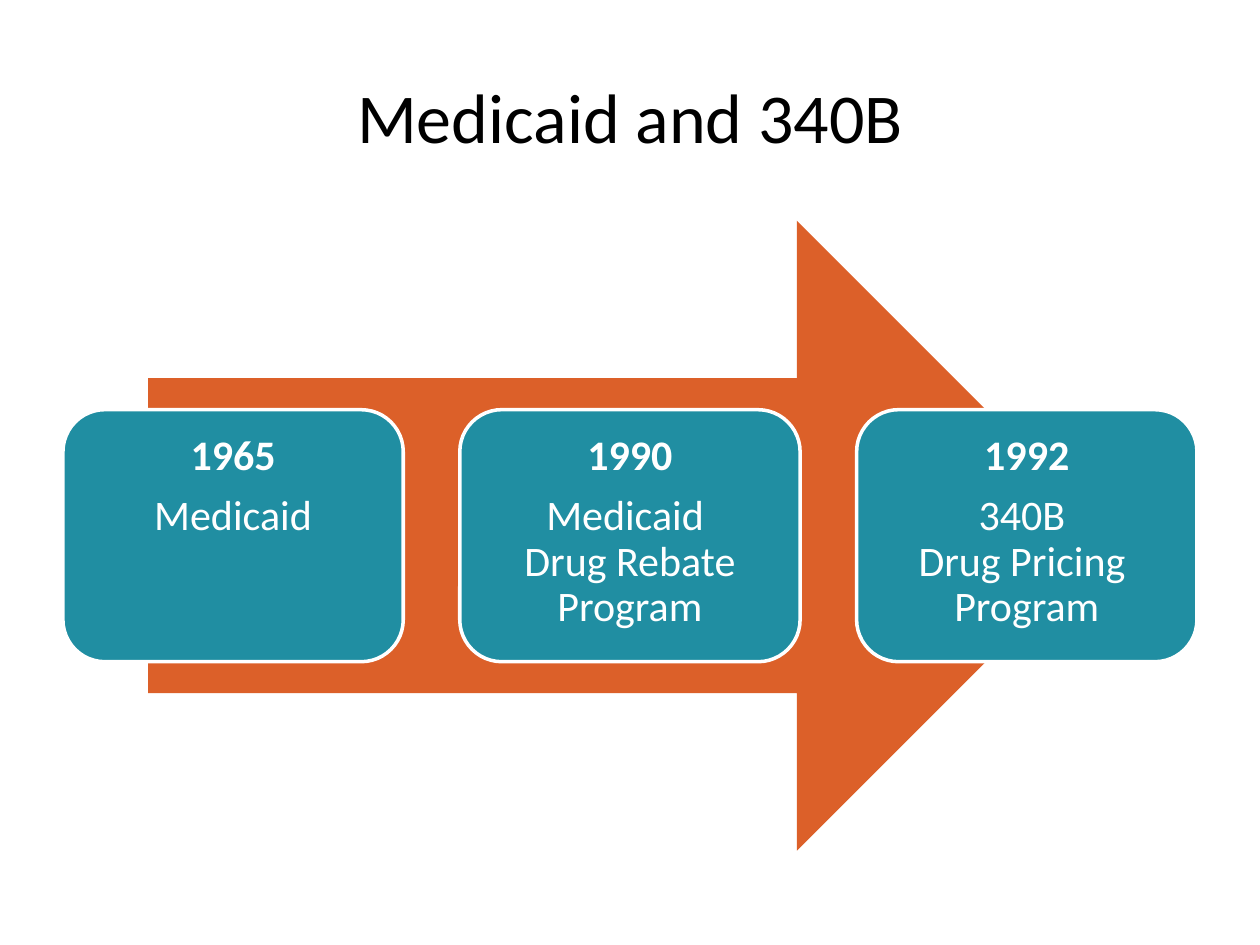
from pptx import Presentation
from pptx.dml.color import RGBColor
from pptx.enum.shapes import MSO_SHAPE as Kind
from pptx.enum.text import MSO_ANCHOR as Anchor, PP_ALIGN as Align
from pptx.util import Cm, Pt

TITLE = "Medicaid and 340B"
STEPS = [
    ("1965", "Medicaid"),
    ("1990", "Medicaid \vDrug Rebate Program"),
    ("1992", "340B \vDrug Pricing \vProgram"),
]
FONT = "Calibri"
BLACK = RGBColor(0, 0, 0)
WHITE = RGBColor(255, 255, 255)
ORANGE = RGBColor(0xDC, 0x60, 0x29)
TEAL = RGBColor(0x20, 0x8E, 0xA2)

WIDE, HIGH = Cm(25.4), Cm(19.05)
EDGE, GAP = Cm(1.27), Cm(1.14)
MID = Cm(10.8)
CARD_H = Cm(5.08)
ARROW_W, ARROW_H = Cm(19.43), Cm(12.7)


def style(para, size, color, bold=False):
    para.alignment = Align.CENTER
    font = para.font
    font.name, font.size, font.bold = FONT, Pt(size), bold
    font.color.rgb = color


def add_shape(slide, kind, left, width, height, fill):
    shape = slide.shapes.add_shape(kind, left, MID - height // 2, width, height)
    shape.shadow.inherit = False
    shape.fill.solid()
    shape.fill.fore_color.rgb = fill
    return shape


def add_card(slide, left, width, lines):
    card = add_shape(slide, Kind.ROUNDED_RECTANGLE, left, width, CARD_H, TEAL)
    card.line.color.rgb = WHITE
    card.line.width = Pt(2)
    frame = card.text_frame
    frame.word_wrap = True
    frame.vertical_anchor = Anchor.TOP
    frame.margin_left = frame.margin_right = Cm(0.25)
    frame.margin_top = frame.margin_bottom = Cm(0.25)
    frame.text = "\n".join(lines)
    for row, para in enumerate(frame.paragraphs):
        style(para, 24, WHITE, bold=row == 0)
        para.line_spacing = 0.9
        para.space_after = Pt(8.5)


def main():
    deck = Presentation()
    deck.slide_width, deck.slide_height = WIDE, HIGH
    slide = deck.slides.add_slide(deck.slide_layouts[5])

    title = slide.shapes.title
    title.left, title.top = EDGE, Cm(0.84)
    title.width, title.height = WIDE - 2 * EDGE, Cm(2.97)
    title.text_frame.text = TITLE
    title.text_frame.vertical_anchor = Anchor.MIDDLE
    style(title.text_frame.paragraphs[0], 40, BLACK)

    arrow = add_shape(slide, Kind.RIGHT_ARROW, (WIDE - ARROW_W) // 2,
                      ARROW_W, ARROW_H, ORANGE)
    arrow.line.fill.background()

    count = len(STEPS)
    width = (WIDE - 2 * EDGE - (count - 1) * GAP) // count
    for col, lines in enumerate(STEPS):
        add_card(slide, EDGE + col * (width + GAP), width, lines)

    deck.save("out.pptx")


if __name__ == "__main__":
    main()
